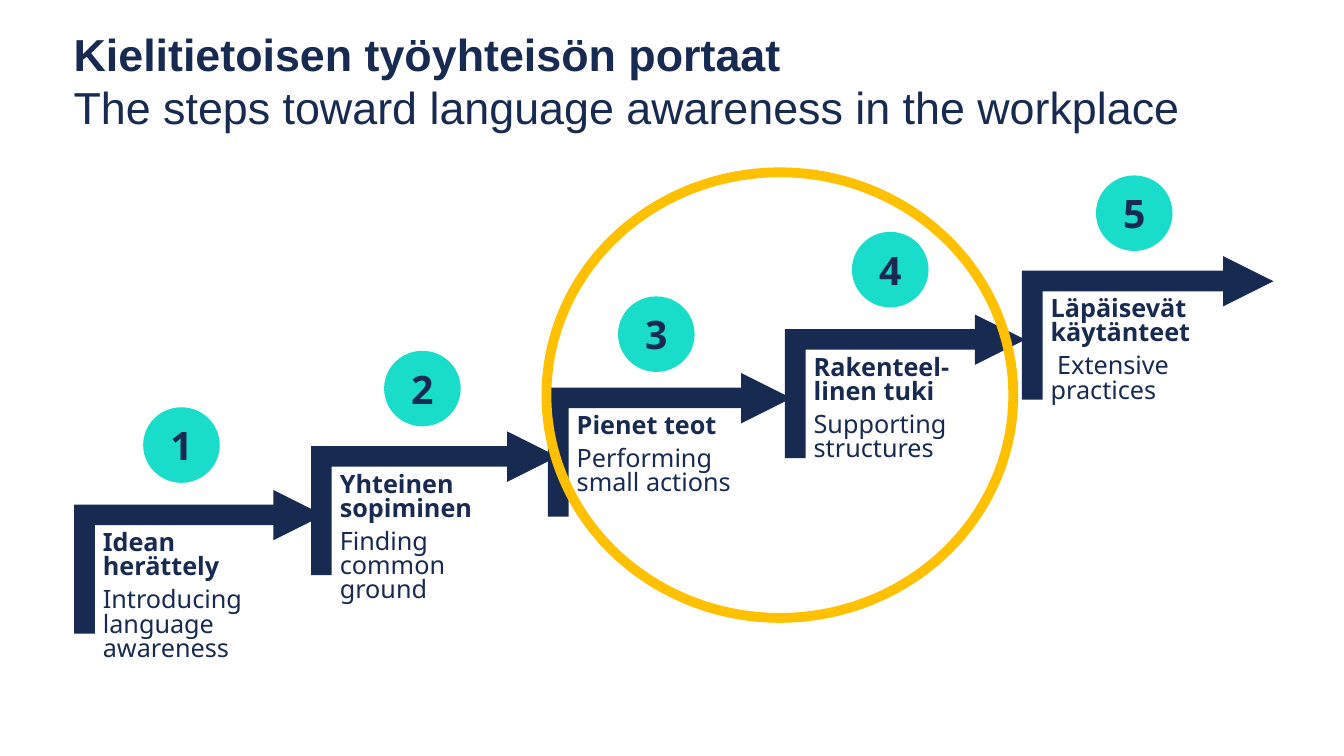
"""Build the slide showing five steps toward language awareness in the workplace."""
from lxml.etree import SubElement
from pptx import Presentation
from pptx.dml.color import RGBColor
from pptx.enum.shapes import MSO_CONNECTOR, MSO_SHAPE
from pptx.enum.text import MSO_ANCHOR, MSO_AUTO_SIZE, PP_ALIGN
from pptx.oxml.ns import qn
from pptx.util import Inches, Pt

NAVY, TURQUOISE, YELLOW = "162A52", "19DDCA", "FFC000"
STEP_WIDTH, STEP_RISE = 2.35, 0.58
STEPS = [
    ("Idean herättely", "Introducing language awareness", 1.42, 4.04, 2.25),
    ("Yhteinen sopiminen", "Finding common ground", 3.81, 3.48, 4.57),
    ("Pienet teot", "Performing small actions", 6.13, 2.94, 6.89),
    ("Rakenteel-linen tuki", "Supporting structures", 8.45, 2.3, 9.21),
    ("Läpäisevät käytänteet", " Extensive practices", 10.87, 1.74, 11.67),
]


def color(value):
    return RGBColor.from_string(value)


def style_font(font, name, size, bold):
    font.name = name
    font.size = Pt(size)
    font.bold = bold
    font.color.rgb = color(NAVY)


deck = Presentation()
deck.slide_width, deck.slide_height = Inches(13.33), Inches(7.5)
page = deck.slides.add_slide(deck.slide_layouts[5])
shapes = page.shapes

title = shapes.title
title.left, title.top = Inches(0.63), Inches(0.6)
title.width, title.height = Inches(12.14), Inches(0.92)
frame = title.text_frame
frame.word_wrap = True
frame.auto_size = MSO_AUTO_SIZE.NONE
frame.vertical_anchor = MSO_ANCHOR.MIDDLE
frame.margin_bottom = Inches(0.58)
heading = frame.paragraphs[0]
heading.alignment = PP_ALIGN.LEFT
finnish = heading.add_run()
finnish.text = "Kielitietoisen työyhteisön portaat"
style_font(finnish.font, "Arial", 32, True)
heading.add_line_break()
english = heading.add_run()
english.text = "The steps toward language awareness in the workplace"
style_font(english.font, "Arial", 32, False)

for index, (name, translation, badge_left, badge_top, arrow_left) in enumerate(STEPS):
    across, up = index * STEP_WIDTH, index * STEP_RISE

    stair = shapes.add_shape(MSO_SHAPE.CORNER, Inches(1.16 + across), Inches(4.58 - up),
                             Inches(1.28), Inches(2.13))
    stair.rotation = 90
    stair.adjustments[0] = stair.adjustments[1] = 0.16
    stair.shadow.inherit = False
    stair.fill.solid()
    stair.fill.fore_color.rgb = color(NAVY)
    stair.line.fill.background()

    box = shapes.add_textbox(Inches(0.95 + across), Inches(5.21 - up), Inches(1.92), Inches(1.68))
    frame = box.text_frame
    frame.word_wrap = True
    frame.margin_left = frame.margin_right = Inches(0.07)
    frame.margin_top = frame.margin_bottom = Inches(0.07)
    frame.text = f"{name}\n{translation}"
    for para, bold in zip(frame.paragraphs, (True, False)):
        para.line_spacing = 0.8
        para.space_after = Pt(6.3)
        style_font(para.font, "Noto Sans", 18, bold)

    badge = shapes.add_shape(MSO_SHAPE.FLOWCHART_CONNECTOR, Inches(badge_left), Inches(badge_top),
                             Inches(0.76), Inches(0.75))
    badge.shadow.inherit = False
    badge.fill.solid()
    badge.fill.fore_color.rgb = color(TURQUOISE)
    badge.line.fill.background()
    badge.text_frame.text = str(index + 1)
    badge.text_frame.vertical_anchor = MSO_ANCHOR.MIDDLE
    number = badge.text_frame.paragraphs[0]
    number.alignment = PP_ALIGN.CENTER
    style_font(number.font, "Noto Sans", 28, True)

    arrow_top = Inches(5.11 - up)
    arrow = shapes.add_connector(MSO_CONNECTOR.STRAIGHT, Inches(arrow_left), arrow_top,
                                 Inches(arrow_left + 0.96), arrow_top)
    arrow.line.color.rgb = color(NAVY)
    arrow.line.width = Pt(12)
    properties = arrow.element.spPr
    SubElement(properties.find(qn("a:ln")), qn("a:tailEnd"), type="triangle")
    SubElement(properties, qn("a:effectLst"))

highlight = shapes.add_shape(MSO_SHAPE.OVAL, Inches(5.42), Inches(1.71), Inches(4.63), Inches(4.42))
highlight.shadow.inherit = False
highlight.fill.background()
highlight.line.color.rgb = color(YELLOW)
highlight.line.width = Pt(7)

deck.save("out.pptx")
